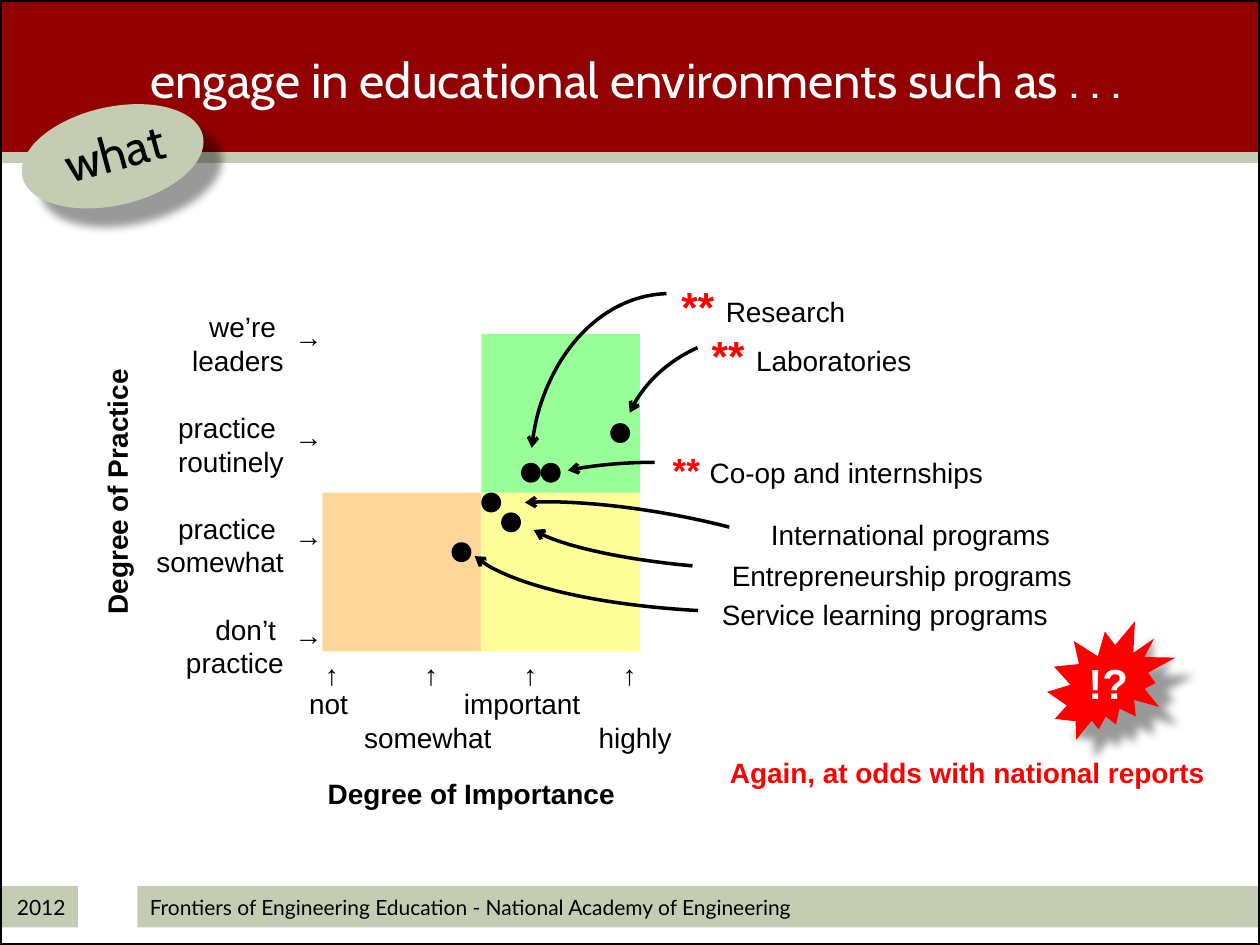
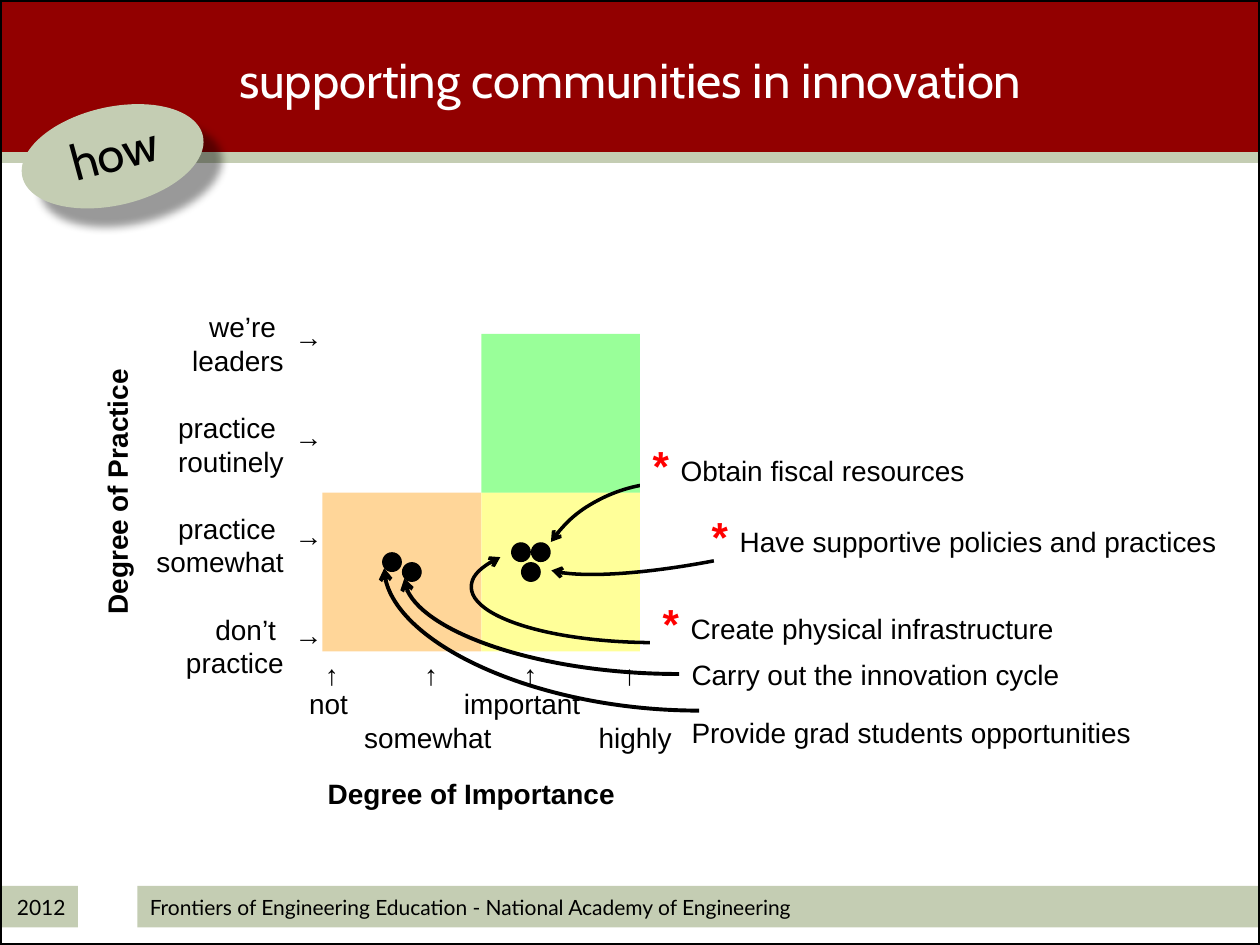
"""Builds two slides that plot degree of practice against degree of importance."""
import pptx
import pptx.util
import pptx.dml.color
import pptx.enum.shapes
import pptx.enum.text
import pptx.oxml.ns
import lxml.etree

Pt = pptx.util.Pt
qn = pptx.oxml.ns.qn
RGB = pptx.dml.color.RGBColor.from_string
Kind = pptx.enum.shapes.MSO_SHAPE
Link = pptx.enum.shapes.MSO_CONNECTOR
Side = pptx.enum.text.PP_ALIGN
Mid = pptx.enum.text.MSO_ANCHOR.MIDDLE
Top = pptx.enum.text.MSO_ANCHOR.TOP
sub = lxml.etree.SubElement

HUES = {
    "red": "920000", "sage": "C4CDB3", "black": "000000", "white": "FFFFFF",
    "alert": "FF0000", "yellow": "FFFF00", "green": "00FF00", "orange": "FF9900",
}
FONTS = {
    "title": ("white", {"name": "Cabin", "size": Pt(28), "bold": False}),
    "badge": ("black", {"name": "Cabin", "size": Pt(28), "bold": False}),
    "foot": ("black", {"name": "Lato", "size": Pt(12), "bold": False}),
    "label": ("black", {"name": "Arial", "size": Pt(16), "bold": False}),
    "axis": ("black", {"name": "Arial", "size": Pt(16), "bold": True}),
    "star": ("alert", {"name": "Arial", "size": Pt(24), "bold": True}),
    "small": ("alert", {"name": "Arial", "size": Pt(20), "bold": True}),
    "note": ("alert", {"name": "Arial", "size": Pt(16), "bold": True}),
    "burst": ("white", {"name": "Arial", "size": Pt(24), "bold": True}),
}
CELL = 90.72
UNIT = CELL / 16
STEP = 10 * UNIT
MIDX, MIDY = 275.04, 281.52

DECK = [
    {
        "title": " engage in educational environments such as . . .",
        "badge": "what",
        "arcs": [
            ((303.1, 167.8, 159.1, 203.8), 162.61, 210.06, "H", 0),
            ((354.2, 190.8, 164.2, 141.8), 180.55, 204.79, "H", 0),
            ((263.5, 258.5, 339.8, 91.4), 184.61, 213.12, "HV", 0),
            ((271.4, 293, 209.5, 43.9), 125.13, 209.93, "H", 9.9),
            ((292.3, 264.2, 164.2, 45.4), 162.58, 204.08, "H", 0),
            ((298.8, 283.7, 209.5, 40.3), 172.34, 213.57, "HV", 4.6),
        ],
        "curves": [],
        "labels": [
            ((382.3, 157, 244.1, 36.7), None, [("** ", "star"), ("Research", "label")]),
            ((399.6, 185, 272.2, 36.7), "white", [("** ", "star"), ("Laboratories", "label")]),
            ((377.3, 252.7, 238.3, 31.7), "white",
             [("** ", "small"), ("Co-op and internships", "label")]),
            ((433.4, 292.3, 297.4, 26.6), None, [("International programs", "label")]),
            ((411.1, 315.4, 272.2, 26.6), None, [("Entrepreneurship programs", "label")]),
            ((405.4, 337.7, 272.2, 26.6), "white", [("Service learning programs", "label")]),
        ],
        "dots": [(4, -3), (6, -3), (13, -7), (0, 0), (2, 2), (-3, 5)],
        "note": "Again, at odds with national reports",
    },
    {
        "title": "supporting communities in innovation",
        "badge": "how",
        "arcs": [
            ((303.1, 275.8, 159.1, 141.8), 162.58, 198.83, "H", 0),
            ((269.3, 303.8, 209.5, 63.4), 133.8, 6.6, "HV", 0),
            ((305.3, 279.4, 209.5, 40.3), 172.34, 213.57, "HV", 348.5),
        ],
        "curves": [(399.6, 406.1, 219.6, 324.7), (388.1, 385.2, 231.1, 330.5)],
        "labels": [
            ((365.8, 247.7, 238.3, 36), "white",
             [("* ", "star"), ("Obtain fiscal resources", "label")]),
            ((399.6, 288, 320.4, 36.7), None,
             [("* ", "star"), ("Have supportive policies and practices", "label")]),
            ((371.5, 337.7, 272.2, 36.7), "white",
             [("* ", "star"), ("Create physical infrastructure", "label")]),
            ((388.1, 372.2, 331, 26.6), None, [("Carry out the innovation cycle", "label")]),
            ((388.1, 405.4, 331, 26.6), None,
             [("Provide grad students opportunities", "label")]),
        ],
        "dots": [(4, 7), (5, 5), (3, 5), (-10, 6), (-8, 7)],
        "note": "",
    },
]


def put(kind, box, fill=None, alpha=None, turn=0, shade=False):
    """Add a preset shape to the current slide."""
    shape = slide.shapes.add_shape(kind, *map(Pt, box))
    shape.shadow.inherit = False
    shape.rotation = turn
    shape.line.fill.background()
    if fill:
        shape.fill.solid()
        shape.fill.fore_color.rgb = RGB(HUES[fill])
    else:
        shape.fill.background()
    if alpha:
        tint = shape.element.spPr.find(".//" + qn("a:srgbClr"))
        sub(tint, qn("a:alpha"), val=str(alpha * 1000))
    if shade:
        glow = sub(shape.element.spPr.find(qn("a:effectLst")), qn("a:outerShdw"),
                   blurRad=str(Pt(5)), dist=str(Pt(15)), dir="2700000", rotWithShape="0")
        tint = sub(glow, qn("a:srgbClr"), val=HUES["black"])
        sub(tint, qn("a:alpha"), val="40000")
    return shape


def write(shape, rows, align=Side.LEFT, anchor=Top):
    """Fill a shape with rows of (words, font) runs."""
    frame = shape.text_frame
    frame.word_wrap = True
    frame.vertical_anchor = anchor
    for i, row in enumerate(rows):
        para = frame.add_paragraph() if i else frame.paragraphs[0]
        para.alignment = align
        for words, style in row:
            run = para.add_run()
            run.text = words
            hue, look = FONTS[style]
            run.font.color.rgb = RGB(HUES[hue])
            for key, val in look.items():
                setattr(run.font, key, val)
    return frame


deck = pptx.Presentation()
deck.slide_width, deck.slide_height = Pt(720), Pt(540)

for page in DECK:
    slide = deck.slides.add_slide(deck.slide_layouts[5])
    shapes = slide.shapes

    put(Kind.RECTANGLE, (0, 0, 720, 90), "red")
    rule = shapes.add_connector(Link.STRAIGHT, 0, Pt(90), Pt(720), Pt(90))
    rule.line.color.rgb = RGB(HUES["sage"])
    rule.line.width = Pt(6)
    sub(rule.element.spPr, qn("a:effectLst"))
    foot = put(Kind.RECTANGLE, (78.5, 506.2, 641.5, 23.8), "sage")
    write(foot, [[("Frontiers of Engineering Education - National Academy of Engineering",
                   "foot")]], anchor=Mid)
    year = put(Kind.RECTANGLE, (0, 506.2, 44.6, 23.8), "sage")
    write(year, [[("2012", "foot")]], Side.RIGHT, Mid)
    edge = put(Kind.RECTANGLE, (0, 0, 720, 540))
    edge.line.color.rgb = RGB(HUES["black"])
    edge.line.width = Pt(2.25)

    title = shapes.title
    for key, val in {"left": 0, "top": 0, "width": 720, "height": 90}.items():
        setattr(title, key, Pt(val))
    write(title, [[(page["title"], "title")]], Side.CENTER, Mid)
    edge.element.addnext(title.element)

    for col, row, hue in [(0, 0, "yellow"), (0, -1, "green"), (-1, 0, "orange")]:
        put(Kind.RECTANGLE, (MIDX + col * CELL, MIDY + row * CELL, CELL, CELL), hue, 40)

    levels = ["we’re ", "leaders", "practice ", "routinely",
              "practice ", "somewhat", "don’t ", "practice"]
    scale = shapes.add_textbox(*map(Pt, (76.3, 173.5, 92.9, 239.8)))
    frame = write(scale, [[(word, "label")] for word in levels], Side.RIGHT)
    for para in frame.paragraphs[2::2]:
        para.space_before = Pt(19.2)

    scale = shapes.add_textbox(*map(Pt, (139, 388.8, 278, 46)))
    frame = write(scale, [[("\tnot\timportant", "label")], [("\tsomewhat\thighly", "label")]])
    for para, stops in zip(frame.paragraphs, [(30.5, 119), (62, 196)]):
        tabs = sub(para._p.get_or_add_pPr(), qn("a:tabLst"))
        for stop in stops:
            sub(tabs, qn("a:tab"), pos=str(Pt(stop)), algn="l")

    for i in range(4):
        tick = shapes.add_textbox(*map(Pt, (178.6 + i * STEP, 372.2, 24.5, 26.6)))
        write(tick, [[("↑", "label")]])
        tick = shapes.add_textbox(*map(Pt, (161.3, 179.3 + i * STEP, 28, 26.6)))
        write(tick, [[("→", "label")]])

    for name, left, top, turn in [("Degree of Practice", -23.8, 267.8, 270),
                                  ("Degree of Importance", 178.6, 440, 0)]:
        axis = put(Kind.RECTANGLE, (left, top, 181.4, 26.6), "white", turn=turn)
        write(axis, [[(name, "axis")]], Side.CENTER)

    arrows = []
    for box, start, end, flips, turn in page["arcs"]:
        arc = put(Kind.ARC, box, turn=turn)
        arc.adjustments[0], arc.adjustments[1] = start, end
        for flip in flips:
            arc.element.spPr.find(qn("a:xfrm")).set("flip" + flip, "1")
        arrows.append((arc, 2))
    for ends in page["curves"]:
        curve = shapes.add_connector(Link.CURVE, *map(Pt, ends))
        curve.element.spPr.find(qn("a:prstGeom")).set("prst", "curvedConnector2")
        arrows.append((curve, 2.25))
    for arrow, width in arrows:
        arrow.line.color.rgb = RGB(HUES["black"])
        arrow.line.width = Pt(width)
        sub(arrow.element.spPr.find(qn("a:ln")), qn("a:tailEnd"), type="arrow")
        if arrow.element.spPr.find(qn("a:effectLst")) is None:
            sub(arrow.element.spPr, qn("a:effectLst"))

    for box, fill, runs in page["labels"]:
        if fill:
            label = put(Kind.RECTANGLE, box, fill)
        else:
            label = shapes.add_textbox(*map(Pt, box))
        write(label, [runs])

    for col, row in page["dots"]:
        put(Kind.OVAL, (MIDX + col * UNIT, MIDY + row * UNIT, 2 * UNIT, 2 * UNIT), "black")

    put(Kind.OVAL, (11.5, 61.2, 105.8, 56.2), "sage", turn=347.2, shade=True)
    badge = shapes.add_textbox(*map(Pt, (24.5, 66.2, 81.4, 41)))
    badge.rotation = 344.8
    write(badge, [[(page["badge"], "badge")]], Side.CENTER)

    if page["note"]:
        put(Kind.EXPLOSION2, (598.3, 355, 73.4, 67.7), "alert", shade=True)
        burst = shapes.add_textbox(*map(Pt, (614.9, 372.2, 39.6, 36.7)))
        write(burst, [[("!?", "burst")]])
        note = shapes.add_textbox(*map(Pt, (406.1, 428.4, 289.4, 26.6)))
        write(note, [[(page["note"], "note")]], Side.RIGHT)

deck.save("out.pptx")
